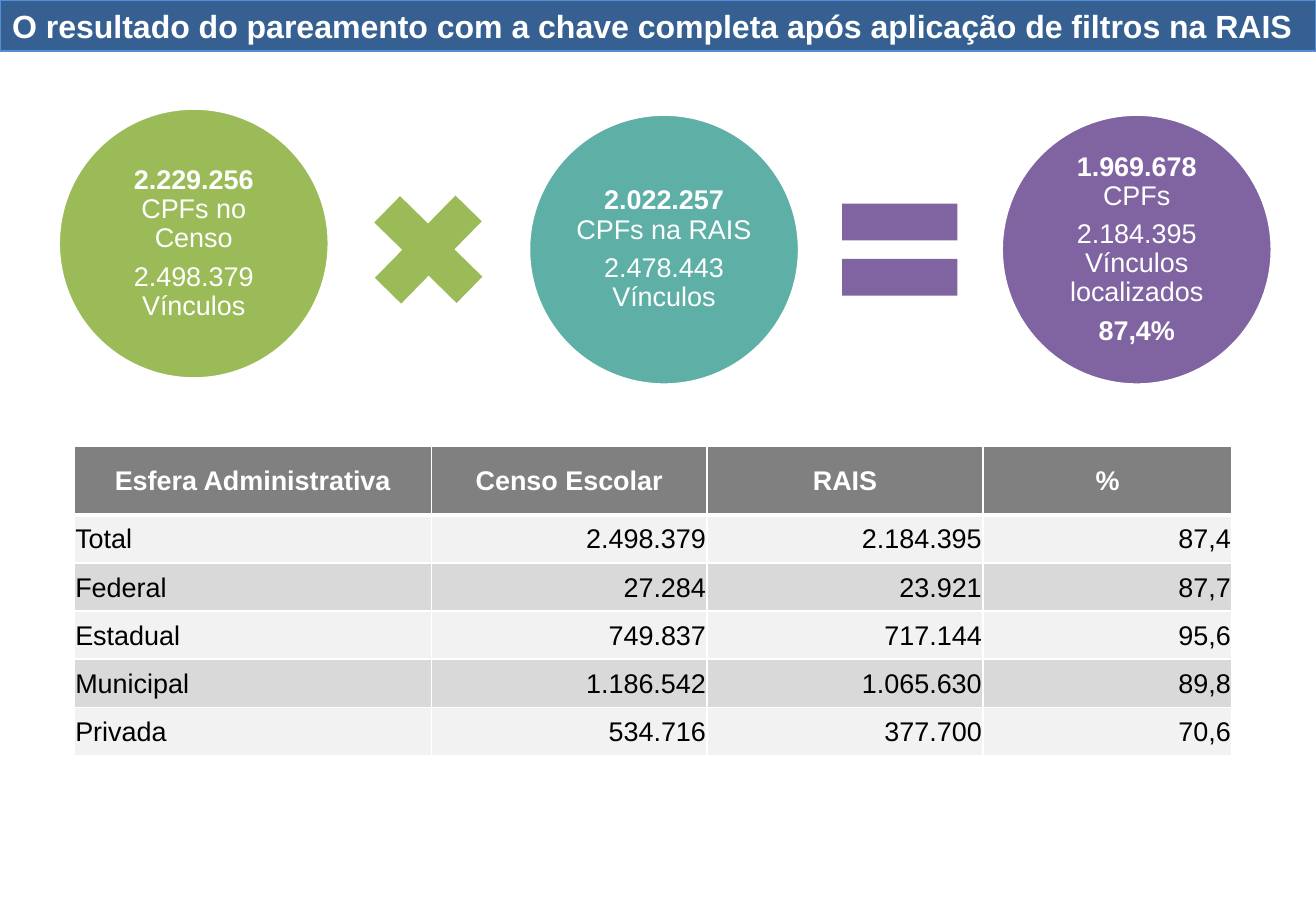
from lxml.etree import SubElement as Sub
from pptx import Presentation
from pptx.dml.color import RGBColor as RGB
from pptx.enum.shapes import MSO_SHAPE as Kind
from pptx.enum.text import MSO_ANCHOR as Anchor, PP_ALIGN as Align
from pptx.oxml.ns import qn
from pptx.util import Inches, Pt

WHITE, BLACK = RGB(255, 255, 255), RGB(0, 0, 0)
NAVY, BLUE = RGB(0x37, 0x60, 0x92), RGB(0x55, 0x8E, 0xD5)
GREEN, TEAL = RGB(0x9B, 0xBB, 0x59), RGB(0x5E, 0xAF, 0xA6)
PURPLE, GRAY = RGB(0x80, 0x64, 0xA2), RGB(0x80, 0x80, 0x80)
LIGHT, MID = RGB(0xF2, 0xF2, 0xF2), RGB(0xD9, 0xD9, 0xD9)

WIDE, DISC, SIGN = 10.83, 2.23, 1.29

CENSUS = [[("2.229.256 ", True), ("CPFs no Censo", False)],
          [("2.498.379 Vínculos", False)]]
RAIS = [[("2.022.257 ", True), ("CPFs na RAIS", False)],
        [("2.478.443 Vínculos", False)]]
MATCH = [[("1.969.678 ", True), ("CPFs", False)],
         [("2.184.395 Vínculos localizados", False)],
         [("87,4%", True)]]

COLS = [2.94, 2.27, 2.27, 2.05]
ROWS = [
    ["Esfera Administrativa", "Censo Escolar", "RAIS", "%"],
    ["Total", "2.498.379", "2.184.395", "87,4"],
    ["Federal", "27.284", "23.921", "87,7"],
    ["Estadual", "749.837", "717.144", "95,6"],
    ["Municipal", "1.186.542", "1.065.630", "89,8"],
    ["Privada", "534.716", "377.700", "70,6"],
]


def write(frame, paras, size=16, color=WHITE, align=Align.CENTER,
          lines=1.0, after=0):
    """Fill a text frame; each paragraph is a list of (text, bold) runs."""
    for i, runs in enumerate(paras):
        para = frame.paragraphs[0] if i == 0 else frame.add_paragraph()
        para.alignment = align
        para.line_spacing = lines
        para.space_before, para.space_after = Pt(0), Pt(after)
        for text, bold in runs:
            run = para.add_run()
            run.text = text
            font = run.font
            font.name, font.size, font.bold = "Arial", Pt(size), bold
            font.color.rgb = color


def place(shape, x, y, w, h):
    shape.left, shape.top = Inches(x), Inches(y)
    shape.width, shape.height = Inches(w), Inches(h)


def paint(shape, fill, line=None, width=1):
    shape.fill.solid()
    shape.fill.fore_color.rgb = fill
    if line is None:
        shape.line.fill.background()
    else:
        shape.line.color.rgb = line
        shape.line.width = Pt(width)


def add_title(slide, x, y, w, h):
    title = slide.shapes.title
    place(title, x, y, w, h)
    paint(title, NAVY, BLUE, 0.75)
    frame = title.text_frame
    frame.word_wrap = True
    frame.vertical_anchor = Anchor.MIDDLE
    write(frame, [[("O resultado do pareamento com a chave completa após "
                    "aplicação de filtros na RAIS", True)]],
          size=19, align=Align.LEFT)


def add_mark(slide, kind, x, y, size, fill, line=None):
    mark = slide.shapes.add_shape(kind, Inches(x), Inches(y),
                                  Inches(size), Inches(size))
    mark.shadow.inherit = False
    paint(mark, fill, line, 2)
    return mark


def add_disc(slide, x, y, fill, paras):
    frame = add_mark(slide, Kind.OVAL, x, y, DISC, fill, WHITE).text_frame
    frame.word_wrap = True
    frame.vertical_anchor = Anchor.MIDDLE
    frame.margin_left = frame.margin_right = Inches(0.02)
    frame.margin_top = frame.margin_bottom = Inches(0.02)
    write(frame, paras, lines=0.9, after=5.6)


def add_sum(slide, x, y):
    """Draw the row of three discs joined by the times and equal signs."""
    add_disc(slide, x, y, GREEN, CENSUS)
    times = add_mark(slide, Kind.MATH_PLUS, x + 2.4, y + 0.52, SIGN, GREEN)
    times.rotation = 314.4
    add_disc(slide, x + 3.87, y + 0.05, TEAL, RAIS)
    add_mark(slide, Kind.MATH_EQUAL, x + 6.28, y + 0.52, SIGN, PURPLE)
    add_disc(slide, x + 7.76, y + 0.05, PURPLE, MATCH)


def add_rules(cell, top, bottom):
    """Give a cell white borders; call it before the fill is set."""
    props = cell._tc.get_or_add_tcPr()
    for side, width in zip("LRTB", (1, 1, top, bottom)):
        rule = Sub(props, qn("a:ln" + side), w=str(Pt(width)))
        Sub(Sub(rule, qn("a:solidFill")), qn("a:srgbClr"), val=str(WHITE))


def add_grid(slide, x, y, w, h):
    table = slide.shapes.add_table(len(ROWS), len(COLS), Inches(x), Inches(y),
                                   Inches(w), Inches(h)).table
    table.horz_banding = False
    for col, width in zip(table.columns, COLS):
        col.width = Inches(width)
    head = 0.57
    for r, texts in enumerate(ROWS):
        step = head if r == 0 else (h - head) / (len(ROWS) - 1)
        table.rows[r].height = Inches(step)
        for c, text in enumerate(texts):
            cell = table.cell(r, c)
            add_rules(cell, 3 if r == 1 else 1, 3 if r == 0 else 1)
            cell.fill.solid()
            cell.fill.fore_color.rgb = (
                GRAY if r == 0 else LIGHT if r % 2 else MID)
            cell.vertical_anchor = Anchor.MIDDLE
            cell.margin_left = cell.margin_right = Inches(0.01)
            cell.margin_top, cell.margin_bottom = Inches(0.01), 0
            side = Align.RIGHT if c else Align.LEFT
            write(cell.text_frame, [[(text, r == 0)]],
                  color=BLACK if r else WHITE,
                  align=side if r else Align.CENTER)


def main():
    deck = Presentation()
    deck.slide_width, deck.slide_height = Inches(WIDE), Inches(7.5)
    slide = deck.slides.add_slide(deck.slide_layouts[5])
    add_title(slide, 0, 0, WIDE, 0.42)
    add_sum(slide, 0.48, 0.89)
    add_grid(slide, 0.61, 3.67, sum(COLS), 2.55)
    deck.save("out.pptx")


if __name__ == "__main__":
    main()
